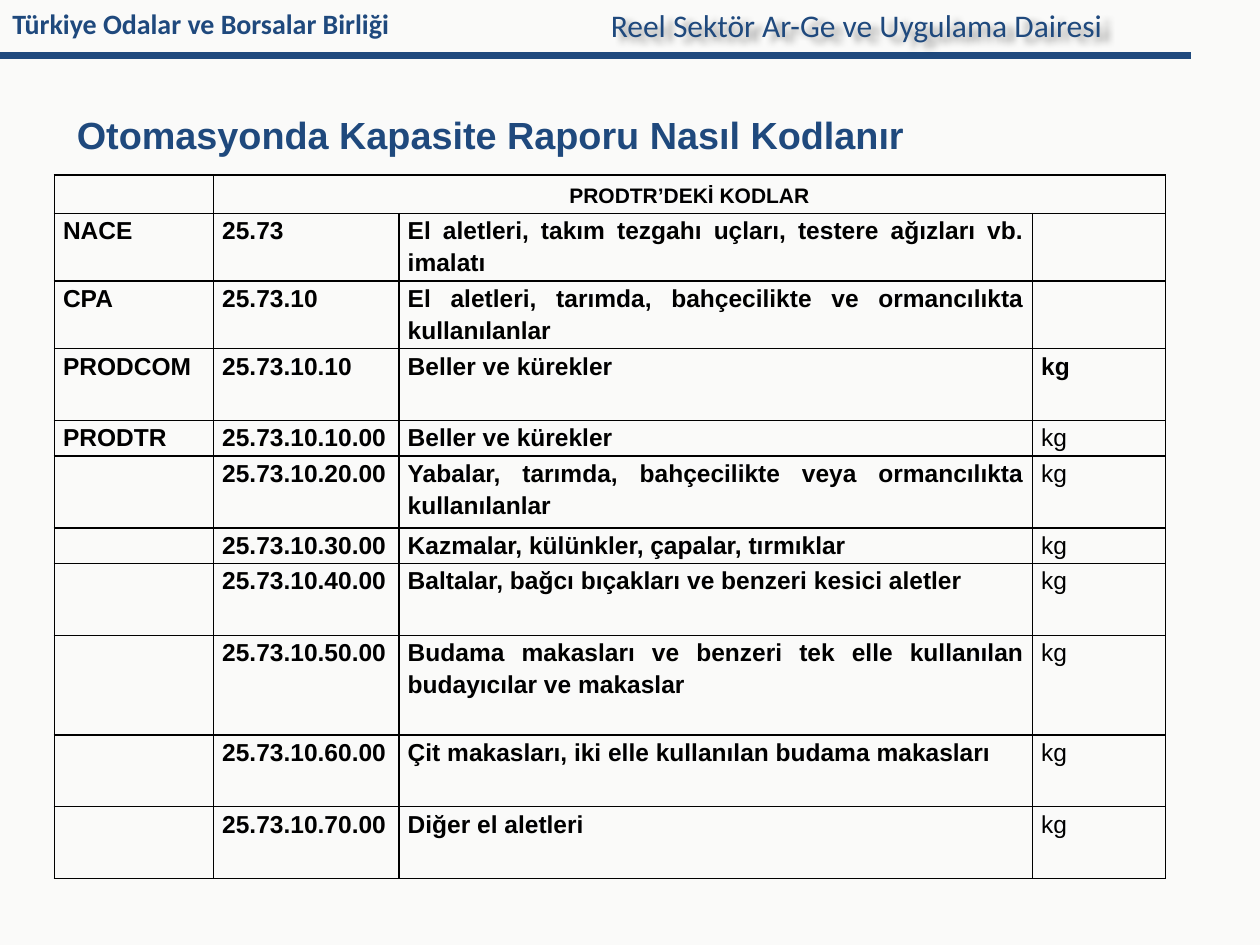
from lxml.etree import SubElement
from pptx import Presentation
from pptx.dml.color import RGBColor
from pptx.enum.shapes import MSO_CONNECTOR as Connector
from pptx.enum.text import MSO_ANCHOR as Anchor, MSO_AUTO_SIZE as AutoSize, PP_ALIGN as Align
from pptx.oxml.ns import qn
from pptx.util import Pt

NAVY = RGBColor(0x1F, 0x49, 0x7D)
BLACK = RGBColor(0, 0, 0)
PAPER = RGBColor(0xFA, 0xFA, 0xF9)

COLUMN_WIDTHS = [91, 106, 362, 76]
ROW_HEIGHTS = [22, 38.6, 38.6, 41, 20.4, 41, 20.4, 41, 57, 41, 41]
CODE_ROWS = [
    ("NACE", "25.73", "El aletleri, takım tezgahı uçları, testere ağızları vb. imalatı", ""),
    ("CPA", "25.73.10", "El aletleri, tarımda, bahçecilikte ve ormancılıkta kullanılanlar", ""),
    ("PRODCOM", "25.73.10.10", "Beller ve kürekler", "kg"),
    ("PRODTR", "25.73.10.10.00", "Beller ve kürekler", "kg"),
    ("", "25.73.10.20.00", "Yabalar, tarımda, bahçecilikte veya ormancılıkta kullanılanlar", "kg"),
    ("", "25.73.10.30.00", "Kazmalar, külünkler, çapalar, tırmıklar", "kg"),
    ("", "25.73.10.40.00", "Baltalar, bağcı bıçakları ve benzeri kesici aletler", "kg"),
    ("", "25.73.10.50.00",
     "Budama makasları ve benzeri tek elle kullanılan budayıcılar ve makaslar", "kg"),
    ("", "25.73.10.60.00", "Çit makasları, iki elle kullanılan budama makasları", "kg"),
    ("", "25.73.10.70.00", "Diğer el aletleri", "kg"),
]
FIRST_PRODTR_ROW = 4


def apply_format(target, values):
    for name, value in values.items():
        setattr(target, name, value)


def write(frame, text, color, font, **paragraph_format):
    para = frame.paragraphs[0]
    apply_format(para, paragraph_format)
    span = para.add_run()
    span.text = text
    apply_format(span.font, font)
    span.font.color.rgb = color


def add_header_text(slide, text, left, width, height, font):
    box = slide.shapes.add_textbox(Pt(left), 0, Pt(width), Pt(height))
    box.text_frame.word_wrap = True
    write(box.text_frame, text, NAVY, font)
    return box


def add_soft_shadow(box):
    effects = SubElement(box.element.spPr, qn("a:effectLst"))
    shadow = SubElement(effects, qn("a:outerShdw"), blurRad="50800", dist="63500", dir="1800000")
    color = SubElement(shadow, qn("a:srgbClr"), val="000000")
    SubElement(color, qn("a:alpha"), val="40000")


def add_rule(slide, y, length):
    rule = slide.shapes.add_connector(Connector.STRAIGHT, 0, Pt(y), Pt(length), Pt(y))
    rule.line.color.rgb = NAVY
    rule.line.width = Pt(4)
    SubElement(rule.element.spPr, qn("a:effectLst"))


def set_title(slide, text):
    title = slide.shapes.title
    apply_format(title, {"left": Pt(36.7), "top": Pt(58), "width": Pt(648), "height": Pt(34)})
    apply_format(title.text_frame, {"word_wrap": True, "auto_size": AutoSize.NONE,
                                    "vertical_anchor": Anchor.MIDDLE})
    write(title.text_frame, text, NAVY, {"name": "Arial", "size": Pt(21.6), "bold": True},
          alignment=Align.LEFT, line_spacing=1.15)


def add_borders(cell):
    properties = cell._tc.get_or_add_tcPr()
    for side in ("a:lnL", "a:lnR", "a:lnT", "a:lnB"):
        line = SubElement(properties, qn(side), w=str(Pt(1)))
        fill = SubElement(line, qn("a:solidFill"))
        SubElement(fill, qn("a:srgbClr"), val=str(BLACK))


def fill_cell(cell, text, size=14, bold=True, align=Align.JUSTIFY, anchor=Anchor.TOP):
    apply_format(cell, {"margin_left": Pt(5), "margin_right": Pt(5), "margin_top": 0,
                        "margin_bottom": 0, "vertical_anchor": anchor})
    add_borders(cell)
    cell.fill.background()
    if text:
        write(cell.text_frame, text, BLACK, {"name": "Arial", "size": Pt(size), "bold": bold},
              alignment=align, line_spacing=1.15)
    else:
        # Small end mark keeps empty cells from stretching their row
        SubElement(cell.text_frame.paragraphs[0]._p, qn("a:endParaRPr"), sz="1200")


def add_code_table(slide):
    frame = slide.shapes.add_table(len(ROW_HEIGHTS), len(COLUMN_WIDTHS), Pt(31), Pt(100),
                                   Pt(sum(COLUMN_WIDTHS)), Pt(sum(ROW_HEIGHTS)))
    table = frame.table
    apply_format(table, {"first_row": False, "horz_banding": False})
    for column, width in zip(table.columns, COLUMN_WIDTHS):
        column.width = Pt(width)
    for row, height in zip(table.rows, ROW_HEIGHTS):
        row.height = Pt(height)

    # Heading row, joined over the last three columns
    table.cell(0, 1).merge(table.cell(0, 3))
    for column, text in enumerate(("", "PRODTR’DEKİ KODLAR", "", "")):
        fill_cell(table.cell(0, column), text, 12, align=Align.CENTER, anchor=Anchor.MIDDLE)

    # Codes; the units of the PRODTR rows are not bold
    for row, texts in enumerate(CODE_ROWS, 1):
        for column, text in enumerate(texts):
            fill_cell(table.cell(row, column), text,
                      bold=column < 3 or row < FIRST_PRODTR_ROW)


def main():
    deck = Presentation()
    deck.slide_width, deck.slide_height = Pt(720), Pt(540)
    slide = deck.slides.add_slide(deck.slide_layouts[5])
    slide.background.fill.solid()
    slide.background.fill.fore_color.rgb = PAPER

    # Header band
    add_rule(slide, 31.7, 680.4)
    add_header_text(slide, "Türkiye Odalar ve Borsalar Birliği", 0, 587, 26.6,
                    {"name": "Calibri", "size": Pt(16), "bold": True})
    department = add_header_text(slide, "Reel Sektör Ar-Ge ve Uygulama Dairesi", 342, 317.5, 29,
                                 {"name": "Calibri", "size": Pt(18)})
    add_soft_shadow(department)

    # Title and table
    set_title(slide, "Otomasyonda Kapasite Raporu Nasıl Kodlanır")
    add_code_table(slide)
    deck.save("out.pptx")


if __name__ == "__main__":
    main()
